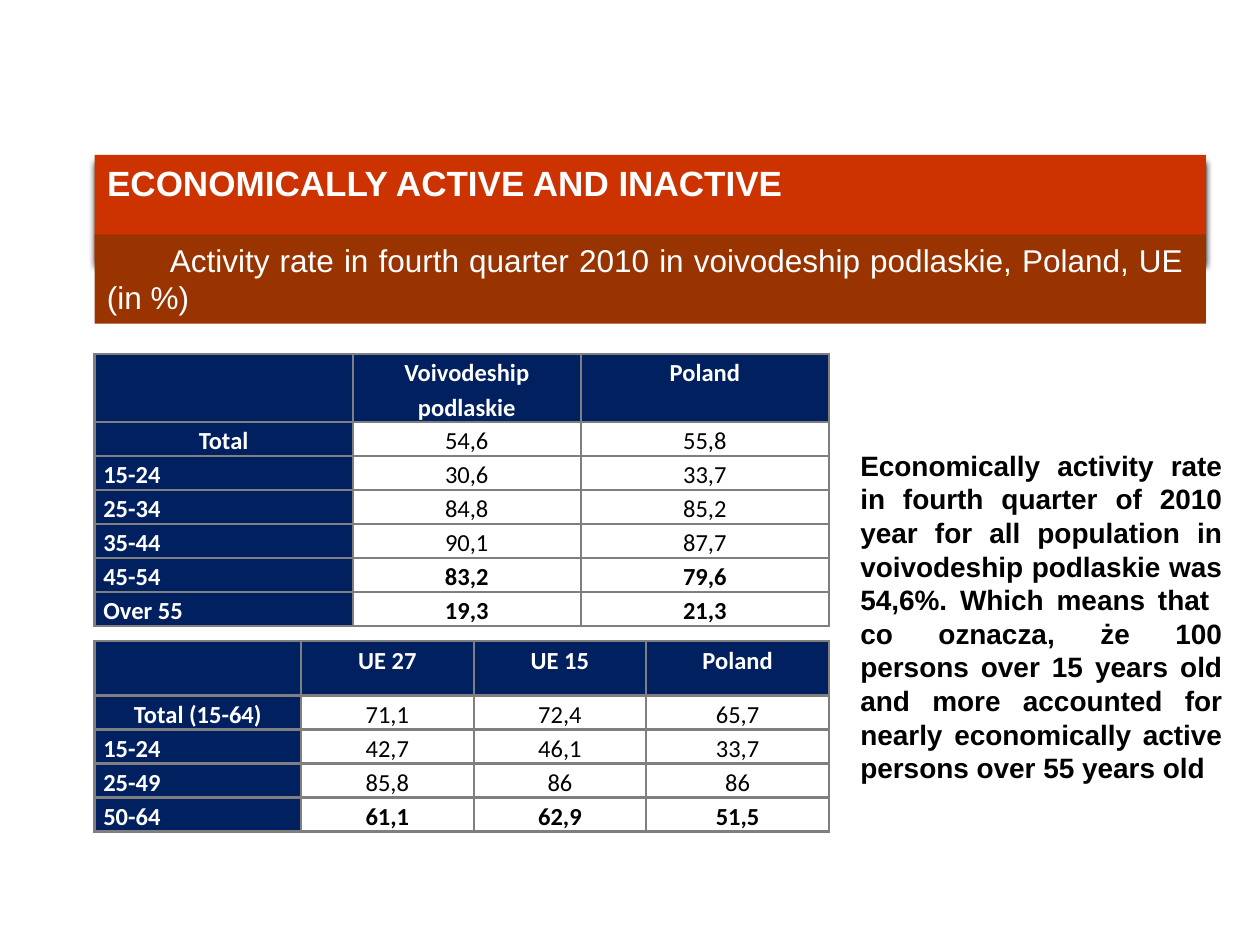
from lxml.etree import SubElement
from pptx import Presentation
from pptx.dml.color import RGBColor
from pptx.enum.shapes import MSO_SHAPE
from pptx.enum.text import MSO_ANCHOR, MSO_AUTO_SIZE, PP_ALIGN
from pptx.oxml import parse_xml
from pptx.oxml.ns import qn
from pptx.util import Inches, Pt

WHITE = RGBColor(0xFF, 0xFF, 0xFF)
BLACK = RGBColor(0x00, 0x00, 0x00)
RED = RGBColor(0xCC, 0x33, 0x00)
BROWN = RGBColor(0x99, 0x33, 0x00)
NAVY = RGBColor(0x00, 0x20, 0x60)
GRAY = RGBColor(0x7F, 0x7F, 0x7F)

LEFT = 0.75
BANNER_WIDTH = 8.82
ROW_HEIGHT = 0.27
BORDER_WIDTH = Pt(1.5)
NAMESPACE = 'xmlns:a="http://schemas.openxmlformats.org/drawingml/2006/main"'

TITLE = "ECONOMICALLY ACTIVE AND INACTIVE"
SUBTITLE = "\tActivity rate in fourth quarter 2010 in voivodeship podlaskie, Poland, UE  (in %)"
COMMENT = (
    "Economically activity rate in fourth quarter of 2010 year for all population in "
    "voivodeship podlaskie was 54,6%. Which means that  co oznacza, że 100 persons over "
    "15 years old and more accounted for nearly economically active persons over 55 years old"
)
TABLES = [
    {
        "top": 2.81,
        "header_height": 0.54,
        "widths": [2.05, 1.81, 1.97],
        "bold_rows": ["45-54", "Over 55"],
        "rows": [
            ["", "Voivodeship podlaskie", "Poland"],
            ["Total", "54,6", "55,8"],
            ["15-24", "30,6", "33,7"],
            ["25-34", "84,8", "85,2"],
            ["35-44", "90,1", "87,7"],
            ["45-54", "83,2", "79,6"],
            ["Over 55", "19,3", "21,3"],
        ],
    },
    {
        "top": 5.09,
        "header_height": 0.43,
        "widths": [1.64, 1.37, 1.37, 1.45],
        "bold_rows": ["50-64"],
        "rows": [
            ["", "UE 27", "UE 15", "Poland"],
            ["Total (15-64)", "71,1", "72,4", "65,7"],
            ["15-24", "42,7", "46,1", "33,7"],
            ["25-49", "85,8", "86", "86"],
            ["50-64", "61,1", "62,9", "51,5"],
        ],
    },
]


def set_font(paragraph, color, **values):
    for name, value in values.items():
        setattr(paragraph.font, name, value)
    paragraph.font.color.rgb = color


def write_text(shape, text, color, size, bold):
    """Fill a shape with one justified Arial paragraph."""
    frame = shape.text_frame
    frame.text = text
    settings = {
        "word_wrap": True,
        "auto_size": MSO_AUTO_SIZE.SHAPE_TO_FIT_TEXT,
        "vertical_anchor": MSO_ANCHOR.TOP,
    }
    for name, value in settings.items():
        setattr(frame, name, value)
    paragraph = frame.paragraphs[0]
    paragraph.alignment = PP_ALIGN.JUSTIFY
    set_font(paragraph, color, name="Arial", size=Pt(size), bold=bold)


def fill_solid(target, color):
    target.fill.solid()
    target.fill.fore_color.rgb = color


def add_drop_shadow(shape):
    effects = parse_xml(
        f'<a:effectLst {NAMESPACE}><a:outerShdw blurRad="{Pt(4)}" dist="{Pt(4)}" '
        f'dir="5400000" algn="ctr" rotWithShape="0"><a:srgbClr val="{BLACK}"/>'
        "</a:outerShdw></a:effectLst>"
    )
    shape.element.spPr.append(effects)


def add_borders(cell):
    properties = cell._tc.get_or_add_tcPr()
    for index, side in enumerate(("lnL", "lnR", "lnT", "lnB")):
        line = SubElement(properties, qn(f"a:{side}"), w=str(BORDER_WIDTH))
        fill = SubElement(line, qn("a:solidFill"))
        SubElement(fill, qn("a:srgbClr"), val=str(GRAY))
        properties.insert(index, line)


def format_cell(cell, text, is_label, is_bold, alignment):
    if is_label:
        fill_solid(cell, NAVY)
    else:
        cell.fill.background()
    add_borders(cell)
    margins = {
        "margin_left": Inches(0.07),
        "margin_right": Inches(0.07),
        "margin_top": 0,
        "margin_bottom": 0,
    }
    for name, value in margins.items():
        setattr(cell, name, value)
    cell.text = text
    paragraph = cell.text_frame.paragraphs[0]
    paragraph.alignment = alignment
    paragraph.line_spacing = 1.15
    set_font(paragraph, WHITE if is_label else BLACK, name="Calibri", size=Pt(14), bold=is_bold)


def add_rate_table(slide, data):
    rows, widths = data["rows"], data["widths"]
    heights = [data["header_height"]] + [ROW_HEIGHT] * (len(rows) - 1)
    table = slide.shapes.add_table(
        len(rows), len(widths), Inches(LEFT), Inches(data["top"]),
        Inches(sum(widths)), Inches(sum(heights)),
    ).table
    table.first_row = False
    table.horz_banding = False
    for column, width in zip(table.columns, widths):
        column.width = Inches(width)
    for row, height in zip(table.rows, heights):
        row.height = Inches(height)
    for row_index, values in enumerate(rows):
        for column_index, text in enumerate(values):
            is_label = row_index == 0 or column_index == 0
            is_bold = is_label or values[0] in data["bold_rows"]
            is_age_group = column_index == 0 and row_index > 1
            alignment = PP_ALIGN.JUSTIFY if is_age_group else PP_ALIGN.CENTER
            format_cell(table.cell(row_index, column_index), text, is_label, is_bold, alignment)


def main():
    presentation = Presentation()
    presentation.slide_width = Inches(10)
    presentation.slide_height = Inches(7.5)
    slide = presentation.slides.add_slide(presentation.slide_layouts[5])

    title = slide.shapes.title
    title.left, title.top = Inches(LEFT), Inches(1.23)
    title.width, title.height = Inches(BANNER_WIDTH), Inches(0.44)
    fill_solid(title, RED)
    add_drop_shadow(title)
    write_text(title, TITLE, WHITE, 20, True)

    subtitle = slide.shapes.add_shape(
        MSO_SHAPE.RECTANGLE, Inches(LEFT), Inches(1.86), Inches(BANNER_WIDTH), Inches(0.71)
    )
    subtitle.shadow.inherit = False
    subtitle.line.fill.background()
    fill_solid(subtitle, BROWN)
    write_text(subtitle, SUBTITLE, WHITE, 18, False)

    for data in TABLES:
        add_rate_table(slide, data)

    comment = slide.shapes.add_textbox(Inches(6.73), Inches(3.51), Inches(3.07), Inches(2.77))
    write_text(comment, COMMENT, BLACK, 16, True)

    presentation.save("out.pptx")


if __name__ == "__main__":
    main()
